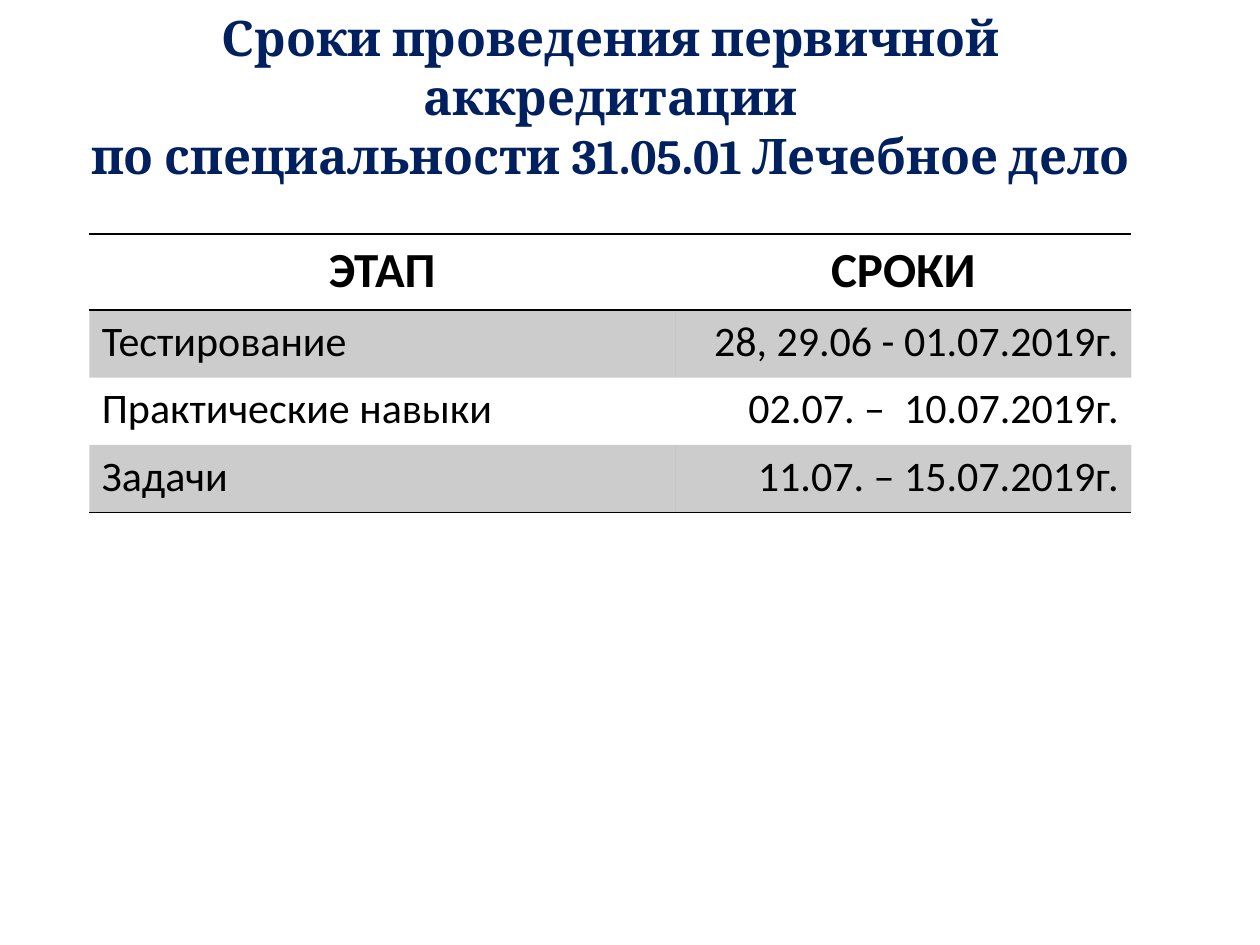
from lxml import etree
from pptx import Presentation
from pptx.dml.color import RGBColor
from pptx.enum.text import MSO_ANCHOR, PP_ALIGN
from pptx.oxml.ns import qn
from pptx.util import Cm, Pt

LEFT, CENTER, RIGHT = PP_ALIGN.LEFT, PP_ALIGN.CENTER, PP_ALIGN.RIGHT
MIDDLE = MSO_ANCHOR.MIDDLE

# Content
TITLE = ("Сроки проведения первичной аккредитации\v"
         "по специальности 31.05.01 Лечебное дело")
ROWS = [
    ("ЭТАП", "СРОКИ"),
    ("Тестирование", "28, 29.06 - 01.07.2019г."),
    ("Практические навыки", "02.07. –  10.07.2019г."),
    ("Задачи", "11.07. – 15.07.2019г."),
]
COLORS = {"title": "002060", "ink": "000000"}
COL_WIDTHS = (Cm(11.81), Cm(9.2))
HEADER_H, ROW_H = Cm(1.53), Cm(1.36)
BAND_ALPHA = 20
NO_STYLE = "{2D5ABB26-0587-4C30-8999-92F81FD0307C}"


def format_text(tf, size, font, color, bold, align):
    for p in tf.paragraphs:
        p.alignment = align
        for r in p.runs:
            r.font.size, r.font.name, r.font.bold = Pt(size), font, bold
            r.font.color.rgb = RGBColor.from_string(color)


def set_borders(cell, sides):
    """Draw 1 pt lines on the given sides, listed in schema order."""
    tc_pr = cell._tc.get_or_add_tcPr()
    for i, side in enumerate(sides):
        ln = etree.Element(qn(f"a:ln{side}"), w=str(Pt(1)))
        fill = etree.SubElement(ln, qn("a:solidFill"))
        etree.SubElement(fill, qn("a:srgbClr"), val=COLORS["ink"])
        tc_pr.insert(i, ln)


def set_band(cell):
    cell.fill.solid()
    cell.fill.fore_color.rgb = RGBColor.from_string(COLORS["ink"])
    clr = cell._tc.tcPr.find(".//" + qn("a:srgbClr"))
    etree.SubElement(clr, qn("a:alpha"), val=str(BAND_ALPHA * 1000))


prs = Presentation()
prs.slide_width, prs.slide_height = Cm(25.4), Cm(19.05)
slide = prs.slides.add_slide(prs.slide_layouts[6])

# Title
tf = slide.shapes.add_textbox(Cm(0.51), Cm(0.53), Cm(23.6), Cm(2.8)).text_frame
tf.word_wrap = True
tf.vertical_anchor = MIDDLE
tf.text = TITLE
format_text(tf, 28, "Cambria", COLORS["title"], True, CENTER)

# Schedule table
height = HEADER_H + ROW_H * (len(ROWS) - 1)
frame = slide.shapes.add_table(len(ROWS), len(COL_WIDTHS), Cm(1.8), Cm(4.72),
                               sum(COL_WIDTHS), height)
table = frame.table
table.first_row = table.horz_banding = False
table._tbl.tblPr.find(qn("a:tableStyleId")).text = NO_STYLE
for column, width in zip(table.columns, COL_WIDTHS):
    column.width = width

for i, row in enumerate(ROWS):
    header = i == 0
    table.rows[i].height = HEADER_H if header else ROW_H
    for j, text in enumerate(row):
        cell = table.cell(i, j)
        cell.text = text
        align = CENTER if header else (LEFT, RIGHT)[j]
        format_text(cell.text_frame, 28 if header else 24, "Calibri",
                    COLORS["ink"], header, align)
        if i % 2:
            set_band(cell)
        else:
            cell.fill.background()
        if header:
            set_borders(cell, "TB")
        elif i == len(ROWS) - 1:
            set_borders(cell, "B")

prs.save("out.pptx")
